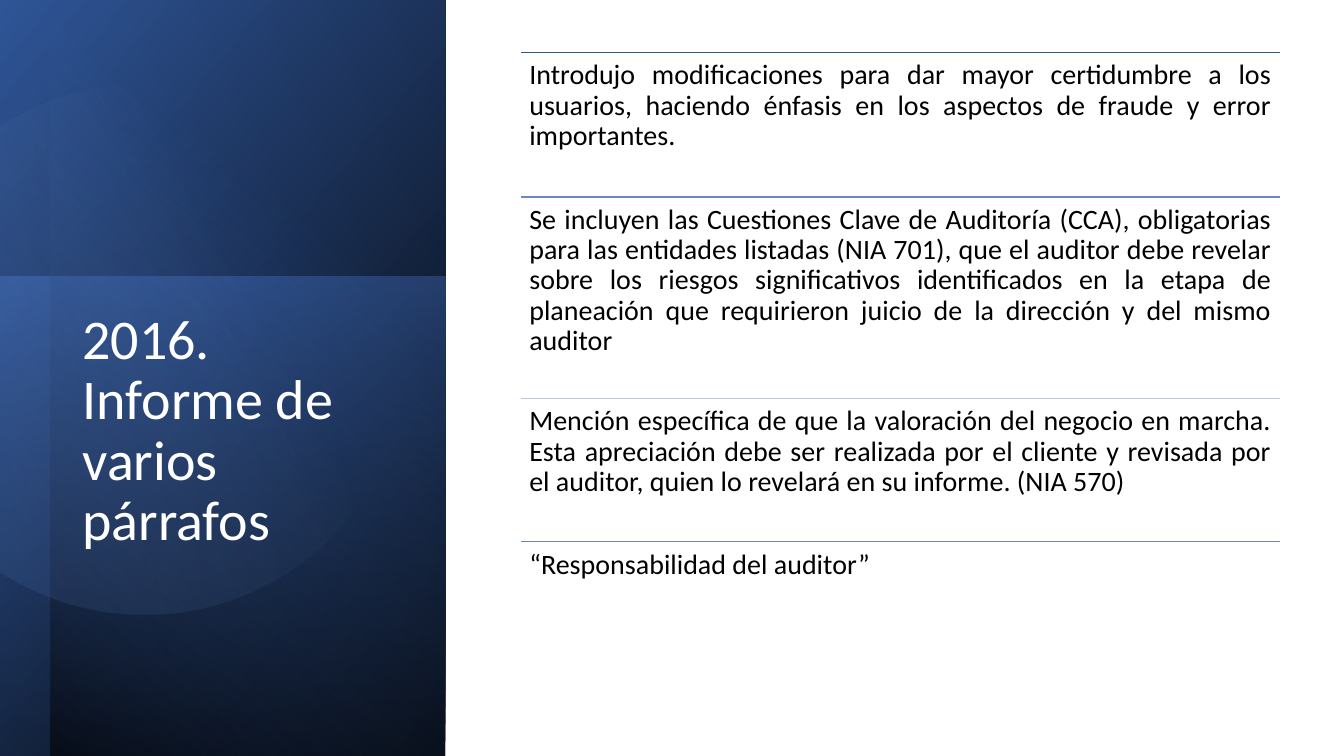
from dataclasses import dataclass
from math import cos, radians, sin

from lxml.etree import SubElement
from pptx import Presentation
from pptx.dml.color import RGBColor
from pptx.enum.shapes import MSO_CONNECTOR, MSO_SHAPE
from pptx.enum.text import MSO_ANCHOR, MSO_AUTO_SIZE, PP_ALIGN
from pptx.oxml.ns import qn
from pptx.util import Cm, Pt


@dataclass(frozen=True)
class Theme:
    font: str = "Calibri"
    title_size: int = 40
    body_size: int = 20
    title_color: str = "FFFFFF"
    body_color: str = "000000"
    black: str = "000000"
    blue: str = "4472C4"
    dark_blue: str = "2F5597"
    navy: str = "203864"
    pale_blue: str = "8FAADC"
    rule_colors: tuple = ("325491", "6C87C5", "BCC6E2", "6C87C5")


@dataclass(frozen=True)
class Box:
    left: float
    top: float
    width: float
    height: float

    def inside(self, left, top, width, height):
        return Box(self.left + left, self.top + top, width, height)

    def lengths(self):
        return Cm(self.left), Cm(self.top), Cm(self.width), Cm(self.height)


THEME = Theme()
TITLE = "2016. Informe de varios párrafos"
STATEMENTS = (
    (3.64, "Introdujo modificaciones para dar mayor certidumbre a los usuarios, "
           "haciendo énfasis en los aspectos de fraude y error importantes."),
    (5.08, "Se incluyen las Cuestiones Clave de Auditoría (CCA), obligatorias para las "
           "entidades listadas (NIA 701), que el auditor debe revelar sobre los riesgos "
           "significativos identificados en la etapa de planeación que requirieron "
           "juicio de la dirección y del mismo auditor"),
    (3.61, "Mención específica de que la valoración del negocio en marcha. Esta "
           "apreciación debe ser realizada por el cliente y revisada por el auditor, "
           "quien lo revelará en su informe. (NIA 570)"),
    (4.33, "“Responsabilidad del auditor”"),
)


def apply(target, formats):
    for name, value in formats.items():
        setattr(target, name, value)


def paint_gradient(shape, angle, stops):
    shape.shadow.inherit = False
    shape.line.fill.background()
    shape.fill.gradient()
    shape.fill.gradient_angle = angle
    for stop, (position, color, opacity) in zip(shape.fill.gradient_stops, stops):
        stop.position = position / 100
        stop.color.rgb = RGBColor.from_string(color)
    colors = shape.fill._xPr.iter(qn("a:srgbClr"))
    for color, (position, name, opacity) in zip(colors, stops):
        if opacity < 100:
            SubElement(color, qn("a:alpha")).set("val", str(opacity * 1000))


def write_text(frame, text, size, color, align, inset):
    apply(frame, {
        "word_wrap": True, "auto_size": MSO_AUTO_SIZE.NONE,
        "vertical_anchor": MSO_ANCHOR.TOP,
        "margin_left": Cm(inset[0]), "margin_right": Cm(inset[0]),
        "margin_top": Cm(inset[1]), "margin_bottom": Cm(inset[1]),
    })
    para = frame.paragraphs[0]
    apply(para, {"alignment": align, "line_spacing": 0.9})
    span = para.add_run()
    span.text = text
    apply(span.font, {"name": THEME.font, "size": Pt(size)})
    span.font.color.rgb = RGBColor.from_string(color)


def add_layer(page, box, rotation, flipped, angle, stops):
    layer = page.shapes.add_shape(MSO_SHAPE.RECTANGLE, *box.lengths())
    layer.rotation = rotation
    if flipped:
        layer._element.spPr.find(qn("a:xfrm")).set("flipH", "1")
    paint_gradient(layer, angle, stops)


def add_disc(page, box):
    center_x, center_y, radius = box.left + 3.63, box.top + 8.81, 6.68
    pivot_x, pivot_y, rotation = box.left + 4.6, box.top + 9, 101.6
    turn = radians(-rotation)
    points = []
    for degree in range(-123, 124, 3):
        x = center_x + radius * cos(radians(degree)) - pivot_x
        y = center_y + radius * sin(radians(degree)) - pivot_y
        points.append((Cm(pivot_x + x * cos(turn) - y * sin(turn)),
                       Cm(pivot_y + x * sin(turn) + y * cos(turn))))
    builder = page.shapes.build_freeform(*points[0])
    builder.add_line_segments(points[1:], close=True)
    disc = builder.convert_to_shape()
    disc.rotation = rotation
    paint_gradient(disc, 310, ((39, THEME.pale_blue, 0), (100, THEME.dark_blue, 26)))


def add_title_panel(page, box):
    add_layer(page, box.inside(-3.94, 3.94, 19.1, 11.23), 90, True, 310,
              ((0, THEME.black, 100), (100, THEME.dark_blue, 100)))
    add_layer(page, box.inside(-0.43, 7.39, 12.09, 11.23), 270, False, 190,
              ((0, THEME.blue, 50), (100, THEME.navy, 0)))
    add_layer(page, box.inside(-3.28, 4.55, 19.05, 9.96), 270, True, 220,
              ((0, THEME.black, 59), (69, THEME.blue, 0)))
    add_disc(page, box)
    title = page.shapes.title
    left, top, width, height = box.inside(1.83, 7.7, 8, 8.53).lengths()
    apply(title, {"left": left, "top": top, "width": width, "height": height})
    write_text(title.text_frame, TITLE, THEME.title_size, THEME.title_color,
               PP_ALIGN.LEFT, (0.25, 0.13))
    page.shapes._spTree.append(title._element)


def add_statements(page, box):
    group = page.shapes.add_group_shape()
    top = 0
    for (height, text), color in zip(STATEMENTS, THEME.rule_colors):
        left, y, width, depth = box.inside(0, top, box.width, height).lengths()
        rule = group.shapes.add_connector(MSO_CONNECTOR.STRAIGHT, left, y, left + width, y)
        rule.line.width = Pt(1)
        rule.line.color.rgb = RGBColor.from_string(color)
        SubElement(rule._element.spPr, qn("a:effectLst"))
        statement = group.shapes.add_textbox(left, y, width, depth)
        write_text(statement.text_frame, text, THEME.body_size, THEME.body_color,
                   PP_ALIGN.JUSTIFY, (0.21, 0.21))
        top += height


def main():
    deck = Presentation()
    apply(deck, {"slide_width": Cm(33.87), "slide_height": Cm(19.05)})
    page = deck.slides.add_slide(deck.slide_layouts[5])
    add_title_panel(page, Box(0, 0, 11.23, 19.05))
    add_statements(page, Box(13.13, 1.32, 19.12, 16.66))
    deck.save("out.pptx")


if __name__ == "__main__":
    main()
